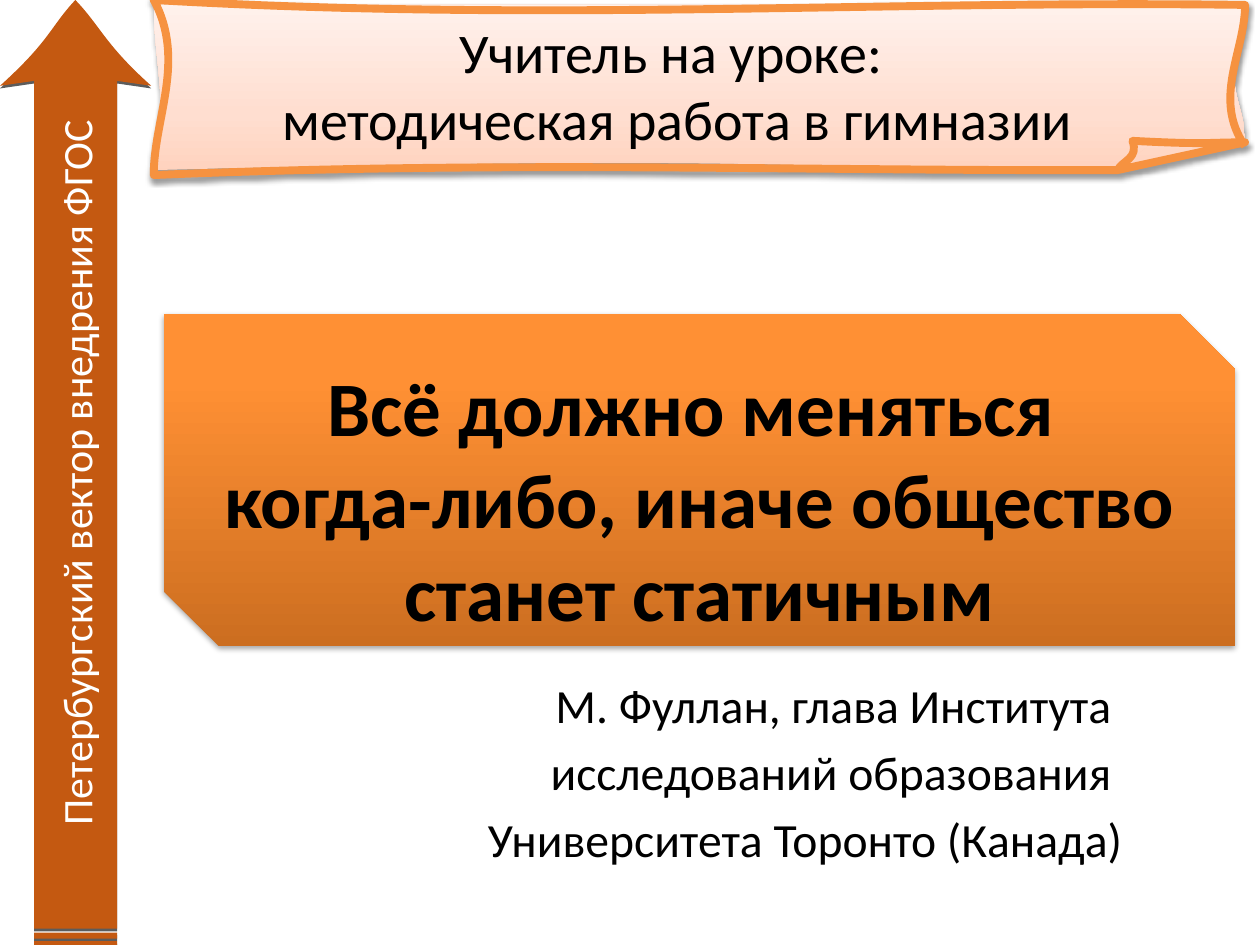
"""Build the slide with a quotation about change in education."""
import dataclasses

import lxml.etree
import pptx
import pptx.dml.color
import pptx.enum.shapes
import pptx.enum.text
import pptx.oxml.ns
import pptx.util

Cm = pptx.util.Cm
Pt = pptx.util.Pt
RGB = pptx.dml.color.RGBColor.from_string
ALIGN = pptx.enum.text.PP_ALIGN
ANCHOR = pptx.enum.text.MSO_ANCHOR
qn = pptx.oxml.ns.qn


@dataclasses.dataclass(frozen=True)
class Theme:
    font: str = "Calibri"
    ink: str = "000000"
    light: str = "FFFFFF"
    arrow: str = "C45911"
    edge: str = "F69240"
    plaque: tuple = ((0, "CC6E20"), (80, "FF9034"), (100, "FF9136"))
    paper: tuple = ((0, "FFD2BD"), (35, "FFDED0"), (100, "FFF2ED"))
    quote_size: float = 44
    title_size: float = 32
    author_size: float = 27.2
    arrow_size: float = 24


theme = Theme()


def draw_outline(shapes, box, paths):
    """Draw paths in hundredths of a centimetre; six numbers make a Bezier curve."""
    left, top, width, height = box
    builder = shapes.build_freeform(left, top, scale=Cm(0.01))
    builder.add_line_segments([(left + width, top + height)], close=False)
    shape = builder.convert_to_shape()
    path_list = shape.element.spPr.find(".//" + qn("a:pathLst"))
    path_list.remove(path_list[0])
    for options, closed, contours in paths:
        path = lxml.etree.SubElement(path_list, qn("a:path"), w=str(width), h=str(height),
                                     **options)
        for contour in contours:
            for index, numbers in enumerate(contour):
                kind = "moveTo" if index == 0 else "lnTo" if len(numbers) == 2 else "cubicBezTo"
                command = lxml.etree.SubElement(path, qn("a:" + kind))
                for x, y in zip(numbers[::2], numbers[1::2]):
                    lxml.etree.SubElement(command, qn("a:pt"), x=str(x - left), y=str(y - top))
            if closed:
                lxml.etree.SubElement(path, qn("a:close"))
    return shape


def finish(shape, stops, shadow):
    """Remove the line, then apply a vertical gradient and a (opacity, blur, distance) shadow."""
    shape.line.fill.background()
    shape.shadow.inherit = False
    properties = shape.element.spPr
    if stops:
        shape.fill.gradient()
        shape.fill.gradient_angle = 90
        stop_list = properties.find(".//" + qn("a:gsLst"))
        for old_stop in list(stop_list):
            stop_list.remove(old_stop)
        for position, colour in stops:
            stop = lxml.etree.SubElement(stop_list, qn("a:gs"), pos=str(position * 1000))
            lxml.etree.SubElement(stop, qn("a:srgbClr"), val=colour)
    opacity, blur, distance = shadow
    outer = lxml.etree.SubElement(
        properties.find(qn("a:effectLst")), qn("a:outerShdw"), blurRad=str(Pt(blur)),
        dist=str(Pt(distance)), dir="5400000", rotWithShape="0")
    tint = lxml.etree.SubElement(outer, qn("a:srgbClr"), val=theme.ink)
    lxml.etree.SubElement(tint, qn("a:alpha"), val=str(opacity * 1000))


deck = pptx.Presentation()
deck.slide_width, deck.slide_height = Cm(25.4), Cm(19.05)
slide = deck.slides.add_slide(deck.slide_layouts[6])
shapes = slide.shapes

plaque = shapes.add_shape(pptx.enum.shapes.MSO_SHAPE.SNIP_2_DIAG_RECTANGLE,
                          Cm(3.3), Cm(6.33), Cm(21.6), Cm(6.7))
finish(plaque, theme.plaque, (35, 3.1, 1.8))

author = shapes.add_textbox(Cm(5.1), Cm(13.51), Cm(17.78), Cm(3.81))

head = [(33, 69), (1742, 69), (1732, 0), (1824, 102, 1852, 102, 1905, 152),
        (1852, 203, 1816, 211, 1732, 305), (1742, 236), (33, 236), (33, 69)]
bars = [[(near, 69), (far, 69), (far, 236), (near, 236), (near, 69)]
        for near, far in ((0, 8), (13, 25))]
arrow = draw_outline(shapes, (0, 0, 1905, 305), [({}, True, [*bars, head])])
arrow.left, arrow.top = Cm(-8), Cm(8)
arrow.rotation = 270
arrow.fill.solid()
arrow.fill.fore_color.rgb = RGB(theme.arrow)
finish(arrow, None, (63, 0, 1.5))

quote = shapes.add_textbox(Cm(3.91), Cm(7.12), Cm(20.4), Cm(5.89))

heading = shapes.add_group_shape().shapes
sheet = [(310, 10), (2510, 10), (2459, 190, 2510, 196, 2510, 287),
         (2352, 307, 2405, 323, 2253, 343), (1605, 343, 1580, 310, 310, 343),
         (343, 229, 310, 122, 310, 10)]
fold = [(2253, 343), (2329, 284), (2510, 287), (2253, 343)]
border = [(2253, 343), (2263, 323, 2296, 320, 2283, 284), (2436, 292, 2433, 287, 2510, 287),
          (2253, 343), (1605, 345, 1013, 323, 310, 353), (310, 239, 376, 122, 310, 0),
          (1095, 46, 1775, 0, 2510, 10), (2510, 104, 2443, 198, 2510, 295)]
banner = draw_outline(heading, (310, 0, 2200, 353), [
    ({"stroke": "0"}, True, [sheet]),
    ({"stroke": "0"}, True, [fold]),
    ({"fill": "none"}, False, [border])])
finish(banner, theme.paper, (38, 3.1, 1.6))
banner.line.color.rgb = RGB(theme.edge)
banner.line.width = Pt(4.5)
title = heading.add_textbox(Cm(2.23), Cm(0.11), Cm(22.86), Cm(3.18))

wording = [
    (author, ["М. Фуллан, глава Института ", "исследований образования ",
              "Университета Торонто (Канада)"],
     theme.author_size, theme.ink, False, ALIGN.RIGHT, ANCHOR.TOP),
    (arrow, ["Петербургский вектор внедрения ФГОС"],
     theme.arrow_size, theme.light, False, ALIGN.CENTER, ANCHOR.MIDDLE),
    (quote, ["Всё должно меняться \vкогда-либо, иначе общество станет статичным"],
     theme.quote_size, theme.ink, True, ALIGN.CENTER, ANCHOR.TOP),
    (title, ["Учитель на уроке: \vметодическая работа в гимназии"],
     theme.title_size, theme.ink, False, ALIGN.CENTER, ANCHOR.MIDDLE),
]
for holder, lines, size, colour, bold, align, anchor in wording:
    frame = holder.text_frame
    frame.word_wrap = True
    frame.vertical_anchor = anchor
    for index, line in enumerate(lines):
        paragraph = frame.add_paragraph() if index else frame.paragraphs[0]
        paragraph.text = line
        paragraph.alignment = align
        if index:
            paragraph.space_before = Pt(5.4)
        for run in paragraph.runs:
            run.font.name = theme.font
            run.font.size = Pt(size)
            run.font.bold = bold
            run.font.color.rgb = RGB(colour)

deck.save("out.pptx")
